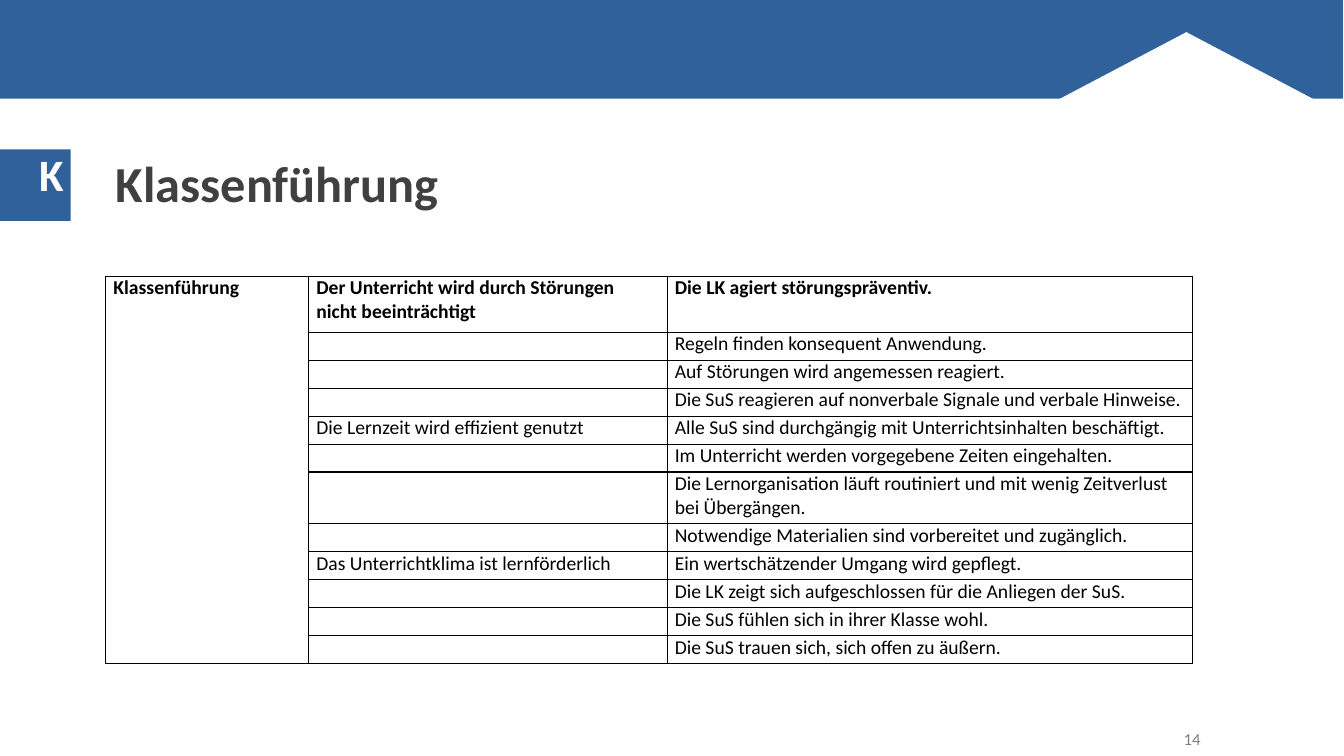
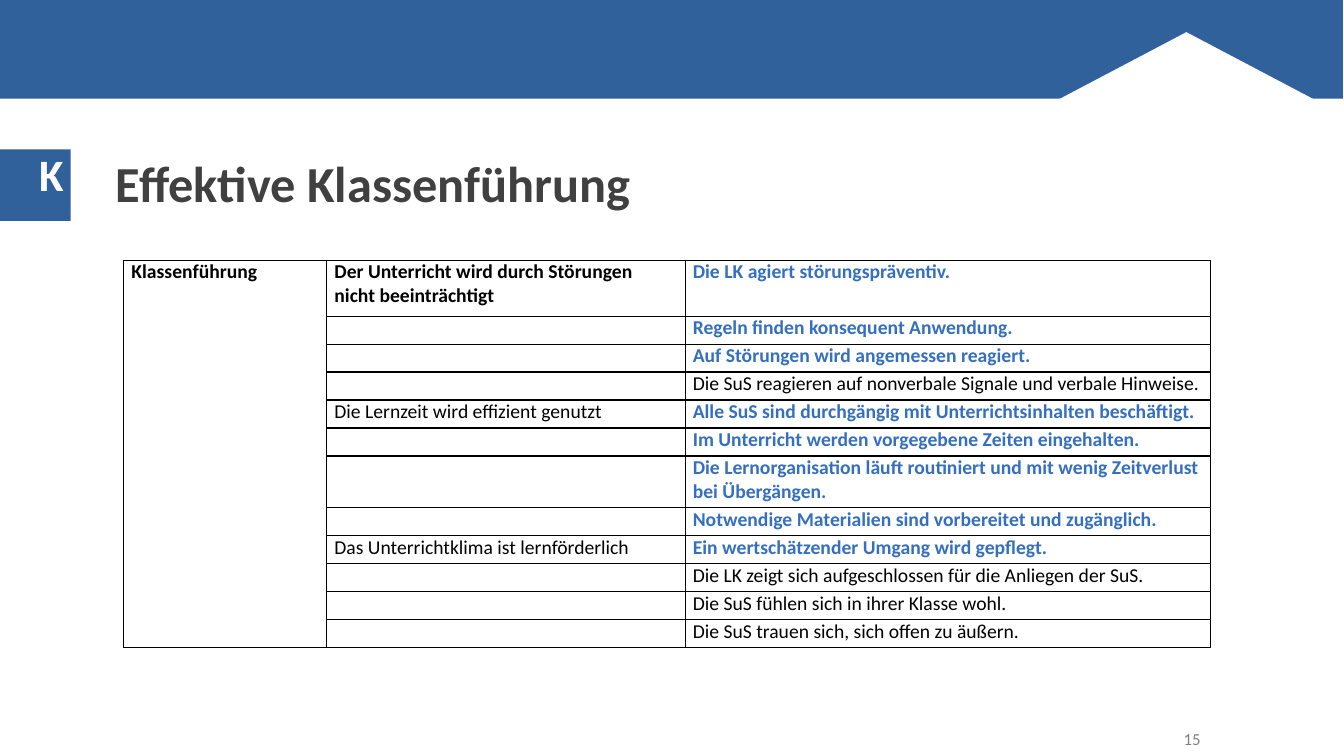
from dataclasses import dataclass

from lxml.etree import SubElement
from pptx import Presentation
from pptx.dml.color import RGBColor
from pptx.enum.shapes import MSO_SHAPE
from pptx.enum.text import MSO_ANCHOR, MSO_AUTO_SIZE, PP_ALIGN
from pptx.oxml import parse_xml
from pptx.oxml.ns import nsdecls, qn
from pptx.util import Pt

# Content
TOPIC = "Klassenführung"
ROWS = [
    ("Der Unterricht wird durch Störungen nicht beeinträchtigt",
     "Die LK agiert störungspräventiv."),
    ("", "Regeln finden konsequent Anwendung."),
    ("", "Auf Störungen wird angemessen reagiert."),
    ("", "Die SuS reagieren auf nonverbale Signale und verbale Hinweise."),
    ("Die Lernzeit wird effizient genutzt",
     "Alle SuS sind durchgängig mit Unterrichtsinhalten beschäftigt."),
    ("", "Im Unterricht werden vorgegebene Zeiten eingehalten."),
    ("", "Die Lernorganisation läuft routiniert und mit wenig Zeitverlust "
         "bei Übergängen."),
    ("", "Notwendige Materialien sind vorbereitet und zugänglich."),
    ("Das Unterrichtklima ist lernförderlich",
     "Ein wertschätzender Umgang wird gepflegt."),
    ("", "Die LK zeigt sich aufgeschlossen für die Anliegen der SuS."),
    ("", "Die SuS fühlen sich in ihrer Klasse wohl."),
    ("", "Die SuS trauen sich, sich offen zu äußern."),
]
SLIDES = [
    dict(title="Klassenführung", number=14, table_at=(75.6, 197.3),
         highlights=set()),
    dict(title="Effektive Klassenführung", number=15, table_at=(88.5, 185.8),
         highlights={0, 1, 2, 4, 5, 6, 7, 8}),
]
COL_WIDTHS = (145, 256, 375)
ROW_HEIGHT = 20
TALL_ROWS = {0: 40, 6: 37}
BLEED = -0.72


@dataclass(frozen=True)
class Theme:
    font: str = "Calibri"
    band: str = "30619B"
    white: str = "FFFFFF"
    title: str = "404040"
    ink: str = "000000"
    highlight: str = "346FC0"
    muted: str = "808080"
    title_size: int = 36
    badge_size: int = 32
    table_size: int = 14
    number_size: int = 12


THEME = Theme()


def style(p, size, color, bold=False):
    f = p.font
    f.name, f.size, f.bold = THEME.font, Pt(size), bold
    f.color.rgb = RGBColor.from_string(color)


def add_block(s, kind, box, color):
    sp = s.shapes.add_shape(kind, *map(Pt, box))
    sp.shadow.inherit = False
    sp.fill.solid()
    sp.fill.fore_color.rgb = RGBColor.from_string(color)
    sp.line.fill.background()
    return sp


def add_label(s, text, box, size, color, bold=False):
    sp = s.shapes.add_textbox(*map(Pt, box))
    tf = sp.text_frame
    tf.word_wrap = True
    tf.text = text
    style(tf.paragraphs[0], size, color, bold)
    return sp


def decorate_layout(layout, s):
    """Build the shared artwork on a slide, then move it to the layout."""
    artwork = [
        add_block(s, MSO_SHAPE.RECTANGLE, (BLEED, 0, 960, 70.5), THEME.band),
        add_block(s, MSO_SHAPE.ISOSCELES_TRIANGLE, (687.6, 23, 319.7, 84.2),
                  THEME.white),
        add_block(s, MSO_SHAPE.RECTANGLE, (BLEED, 106.6, 51.1, 51.1),
                  THEME.band),
        add_label(s, "K", (20.9, 101.5, 26, 46), THEME.badge_size,
                  THEME.white, True),
    ]
    for sp in artwork:
        layout.shapes.element.append(sp.element)


def add_title(s, text):
    sp = s.shapes.title
    sp.left, sp.top, sp.width, sp.height = map(Pt, (75.6, 110.9, 715.7, 45.4))
    tf = sp.text_frame
    tf.text = text
    tf.auto_size = MSO_AUTO_SIZE.NONE
    tf.vertical_anchor = MSO_ANCHOR.BOTTOM
    p = tf.paragraphs[0]
    p.alignment, p.line_spacing = PP_ALIGN.LEFT, 0.9
    style(p, THEME.title_size, THEME.title, True)


def add_number(s, number):
    tf = add_label(s, str(number), (648.7, 516.2, 216, 23.8),
                   THEME.number_size, THEME.muted).text_frame
    tf.vertical_anchor = MSO_ANCHOR.MIDDLE
    tf.paragraphs[0].alignment = PP_ALIGN.RIGHT


def fill_cell(cell, text, color, bold):
    cell.margin_left = cell.margin_right = Pt(5.4)
    cell.margin_top = cell.margin_bottom = 0
    cell.fill.solid()
    cell.fill.fore_color.rgb = RGBColor.from_string(THEME.white)
    cell.text = text
    p = cell.text_frame.paragraphs[0]
    style(p, THEME.table_size, color, bold)
    if not text:  # an empty cell keeps the table's line height
        SubElement(p._p, qn("a:endParaRPr"), sz=str(THEME.table_size * 100))
    # Borders come before the fill in the cell properties
    tcPr = cell._tc.get_or_add_tcPr()
    for i, side in enumerate("LRTB"):
        tcPr.insert(i, parse_xml(
            f'<a:ln{side} {nsdecls("a")} w="{Pt(1)}"><a:solidFill>'
            f'<a:srgbClr val="{THEME.ink}"/></a:solidFill></a:ln{side}>'))


def add_criteria_table(s, at, highlights):
    heights = [TALL_ROWS.get(i, ROW_HEIGHT) for i in range(len(ROWS))]
    box = (*at, sum(COL_WIDTHS), sum(heights))
    table = s.shapes.add_table(len(ROWS), len(COL_WIDTHS),
                               *map(Pt, box)).table
    table.first_row = table.horz_banding = False
    for col, width in zip(table.columns, COL_WIDTHS):
        col.width = Pt(width)
    for i, (goal, criterion) in enumerate(ROWS):
        table.rows[i].height = Pt(heights[i])
        head, marked = i == 0, i in highlights
        fill_cell(table.cell(i, 0), TOPIC if head else "", THEME.ink, head)
        fill_cell(table.cell(i, 1), goal, THEME.ink, head)
        fill_cell(table.cell(i, 2), criterion,
                  THEME.highlight if marked else THEME.ink, head or marked)
    table.cell(0, 0).merge(table.cell(len(ROWS) - 1, 0))


def main():
    prs = Presentation()
    prs.slide_width, prs.slide_height = Pt(960), Pt(540)
    layout = prs.slide_layouts.get_by_name("Title Only")
    for n, page in enumerate(SLIDES):
        s = prs.slides.add_slide(layout)
        if n == 0:
            decorate_layout(layout, s)
        add_title(s, page["title"])
        add_number(s, page["number"])
        add_criteria_table(s, page["table_at"], page["highlights"])
    prs.save("out.pptx")


if __name__ == "__main__":
    main()
